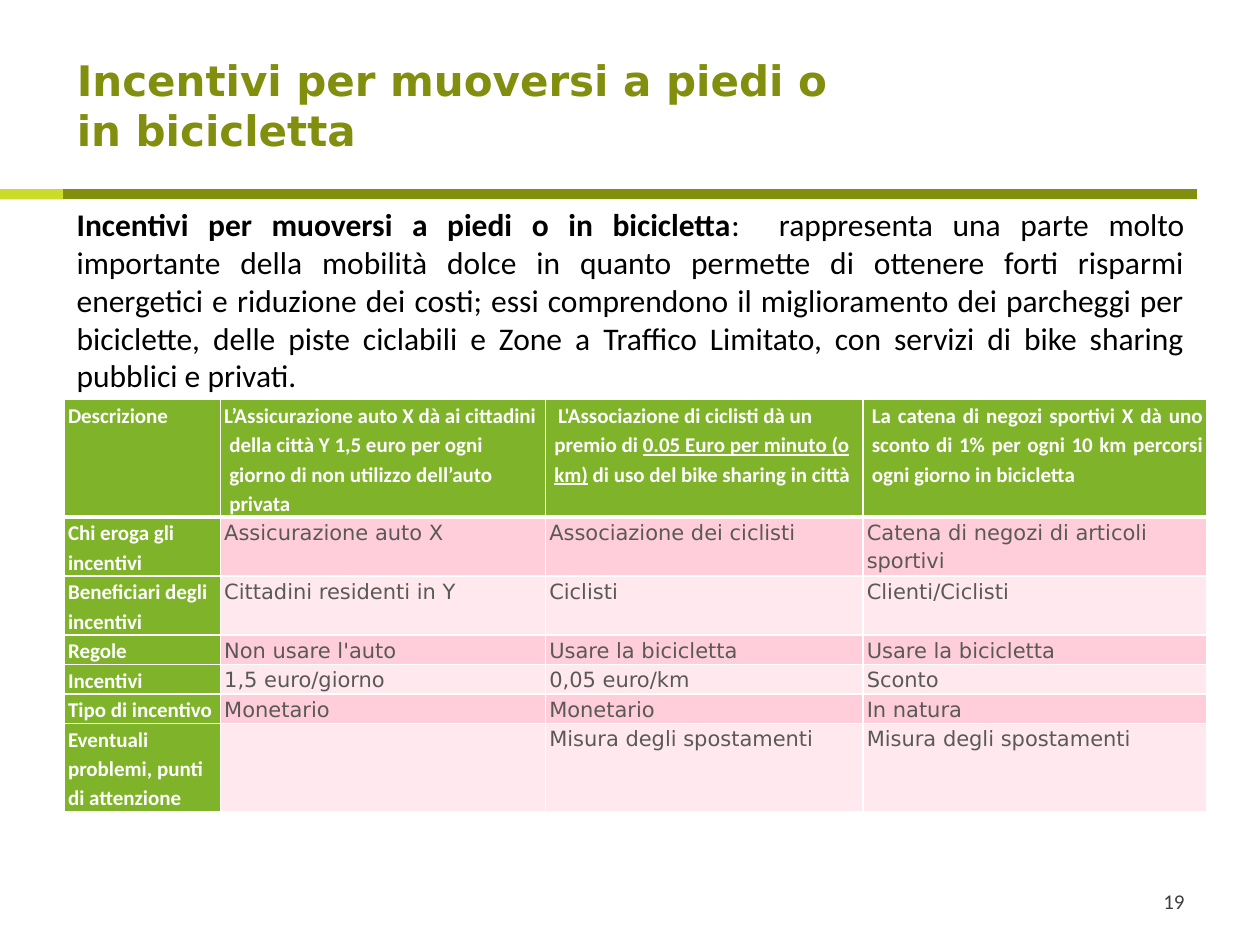
"""Build the slide on incentives for walking and cycling."""
from dataclasses import dataclass
from typing import NamedTuple

from lxml.etree import SubElement
from pptx import Presentation
from pptx.dml.color import RGBColor
from pptx.enum.shapes import MSO_SHAPE
from pptx.enum.text import MSO_ANCHOR, MSO_AUTO_SIZE, PP_ALIGN
from pptx.oxml.ns import qn
from pptx.util import Inches, Pt

GRID_COLUMNS, GRID_ROWS = 100, 75


@dataclass(frozen=True)
class Theme:
    heading_font: str = "DejaVu Sans"
    text_font: str = "Calibri"
    olive: str = "828E0E"
    lime: str = "CADB2A"
    green: str = "7FB32A"
    bands: tuple = ("FFE8EE", "FFCEDA")
    white: str = "FFFFFF"
    black: str = "000000"
    grey: str = "595959"
    dark_grey: str = "404040"
    title_size: int = 24
    body_size: int = 18
    small_size: int = 12


class Box(NamedTuple):
    left: float
    top: float
    width: float
    height: float


class Style(NamedTuple):
    font: str
    size: int
    color: str
    bold: bool = False


class Span(NamedTuple):
    text: str
    bold: bool | None = None
    underline: bool | None = None


class Layout(NamedTuple):
    align: PP_ALIGN = PP_ALIGN.LEFT
    margin: float = 0
    indent: float = 0
    space_after: int = 0


THEME = Theme()
TITLE_STYLE = Style(THEME.heading_font, THEME.title_size, THEME.olive, True)
BODY_STYLE = Style(THEME.text_font, THEME.body_size, THEME.black)
NUMBER_STYLE = Style(THEME.text_font, THEME.small_size, THEME.dark_grey)
LABEL_STYLE = Style(THEME.text_font, THEME.small_size, THEME.white, True)
VALUE_STYLE = Style(THEME.heading_font, THEME.small_size, THEME.grey)

TITLE = "Incentivi per muoversi a piedi o in bicicletta"
BODY = [
    Span(TITLE, bold=True),
    Span(":  rappresenta una parte molto importante della mobilità dolce in quanto permette "
         "di ottenere forti risparmi energetici e riduzione dei costi; essi comprendono il "
         "miglioramento dei parcheggi per biciclette, delle piste ciclabili e Zone a Traffico "
         "Limitato, con servizi di bike sharing pubblici e privati."),
]
HEADER = [
    [Span("Descrizione")],
    [Span("L’Assicurazione auto X dà ai cittadini della città Y 1,5 euro per ogni giorno "
          "di non utilizzo dell’auto privata")],
    [Span("L'Associazione di ciclisti dà un premio di "),
     Span("0.05 Euro per minuto (o km)", underline=True),
     Span(" di uso del bike sharing in città")],
    [Span("La catena di negozi sportivi X dà uno sconto di 1% per ogni 10 km percorsi "
          "ogni giorno in bicicletta")],
]
ROWS = [
    ("Chi eroga gli incentivi", "Assicurazione auto X", "Associazione dei ciclisti",
     "Catena di negozi di articoli sportivi"),
    ("Beneficiari degli incentivi", "Cittadini residenti in Y", "Ciclisti", "Clienti/Ciclisti"),
    ("Regole", "Non usare l'auto", "Usare la bicicletta", "Usare la bicicletta"),
    ("Incentivi", "1,5 euro/giorno", "0,05 euro/km", "Sconto"),
    ("Tipo di incentivo", "Monetario", "Monetario", "In natura"),
    ("Eventuali problemi, punti di attenzione", "", "Misura degli spostamenti",
     "Misura degli spostamenti"),
]
LABEL_LAYOUT = Layout(indent=-0.05, space_after=10)
HEADER_LAYOUTS = [
    LABEL_LAYOUT,
    Layout(margin=0.04, indent=-0.04),
    Layout(margin=0.04, indent=0.03, space_after=10),
    Layout(PP_ALIGN.JUSTIFY, margin=0.04, space_after=10),
]
COLUMN_WIDTHS = (1.24, 2.58, 2.52, 2.73)
LINE_HEIGHT = 0.23
ROW_LINES = (4, 2, 2, 1, 1, 1, 3)


def place(deck, box: Box) -> tuple[int, ...]:
    """Turn grid units into slide lengths."""
    column, row = deck.slide_width / GRID_COLUMNS, deck.slide_height / GRID_ROWS
    return (round(box.left * column), round(box.top * row),
            round(box.width * column), round(box.height * row))


def write(para, spans: list[Span], style: Style) -> None:
    """Fill a paragraph with formatted runs."""
    for span in spans:
        run = para.add_run()
        run.text = span.text
        run.font.name, run.font.size = style.font, Pt(style.size)
        run.font.color.rgb = RGBColor.from_string(style.color)
        run.font.bold = style.bold if span.bold is None else span.bold
        run.font.underline = span.underline


def add_bar(deck, page, box: Box, color: str) -> None:
    """Draw a plain rule."""
    bar = page.shapes.add_shape(MSO_SHAPE.RECTANGLE, *place(deck, box))
    bar.shadow.inherit = False
    bar.fill.solid()
    bar.fill.fore_color.rgb = RGBColor.from_string(color)
    bar.line.fill.background()


def fill_text(deck, shape, box: Box, spans: list[Span], style: Style,
              align: PP_ALIGN, anchor: MSO_ANCHOR) -> None:
    """Position a text shape and write its only paragraph."""
    shape.left, shape.top, shape.width, shape.height = place(deck, box)
    frame = shape.text_frame
    frame.word_wrap, frame.auto_size = True, MSO_AUTO_SIZE.NONE
    frame.vertical_anchor = anchor
    frame.paragraphs[0].alignment = align
    write(frame.paragraphs[0], spans, style)


def fill_cell(cell, spans: list[Span], style: Style, layout: Layout,
              color: str, bottom_width: int = 1) -> None:
    """Write one table cell with its borders and fill."""
    cell.margin_left = cell.margin_right = Inches(0.03)
    cell.margin_top = cell.margin_bottom = 0
    properties = cell._tc.get_or_add_tcPr()
    for edge, width in (("L", 1), ("R", 1), ("T", 1), ("B", bottom_width)):
        line = SubElement(properties, qn(f"a:ln{edge}"), w=str(Pt(width)))
        SubElement(SubElement(line, qn("a:solidFill")), qn("a:srgbClr"), val=THEME.white)
    cell.fill.solid()
    cell.fill.fore_color.rgb = RGBColor.from_string(color)
    para = cell.text_frame.paragraphs[0]
    para.alignment, para.line_spacing = layout.align, 1.15
    para.space_after = Pt(layout.space_after)
    para_properties = para._p.get_or_add_pPr()
    para_properties.set("marL", str(Inches(layout.margin)))
    para_properties.set("indent", str(Inches(layout.indent)))
    write(para, spans, style)


def add_incentive_table(deck, page, box: Box) -> None:
    """Draw the comparison of the three incentives."""
    table = page.shapes.add_table(len(ROW_LINES), len(COLUMN_WIDTHS), *place(deck, box)).table
    table.first_row = table.horz_banding = False
    for column, width in zip(table.columns, COLUMN_WIDTHS):
        column.width = Inches(width)
    for row, lines in zip(table.rows, ROW_LINES):
        row.height = Inches(lines * LINE_HEIGHT)
    for index, (spans, layout) in enumerate(zip(HEADER, HEADER_LAYOUTS)):
        fill_cell(table.cell(0, index), spans, LABEL_STYLE, layout, THEME.green, 3)
    for number, (label, *values) in enumerate(ROWS, start=1):
        fill_cell(table.cell(number, 0), [Span(label)], LABEL_STYLE, LABEL_LAYOUT, THEME.green)
        for index, value in enumerate(values, start=1):
            spans = [Span(value)] if value else []
            fill_cell(table.cell(number, index), spans, VALUE_STYLE, Layout(),
                      THEME.bands[number % 2])


def main() -> None:
    """Create and save the deck."""
    deck = Presentation()
    deck.slide_width, deck.slide_height = Inches(10), Inches(7.5)
    page = deck.slides.add_slide(deck.slide_layouts[5])
    add_bar(deck, page, Box(0, 15, 95, 0.8), THEME.olive)
    add_bar(deck, page, Box(0, 15, 5, 0.8), THEME.lime)
    fill_text(deck, page.shapes.title, Box(5.1, 5.8, 64.3, 7), [Span(TITLE)], TITLE_STYLE,
              PP_ALIGN.LEFT, MSO_ANCHOR.BOTTOM)
    for box, spans, style, align, anchor in (
        (Box(5.1, 15.8, 89.9, 16.2), BODY, BODY_STYLE, PP_ALIGN.JUSTIFY, MSO_ANCHOR.TOP),
        (Box(71.7, 69.5, 23.3, 4), [Span("19")], NUMBER_STYLE, PP_ALIGN.RIGHT, MSO_ANCHOR.MIDDLE),
    ):
        fill_text(deck, page.shapes.add_textbox(0, 0, 0, 0), box, spans, style, align, anchor)
    add_incentive_table(deck, page, Box(5.1, 31.7, 90.7, 32.2))
    deck.save("out.pptx")


if __name__ == "__main__":
    main()
